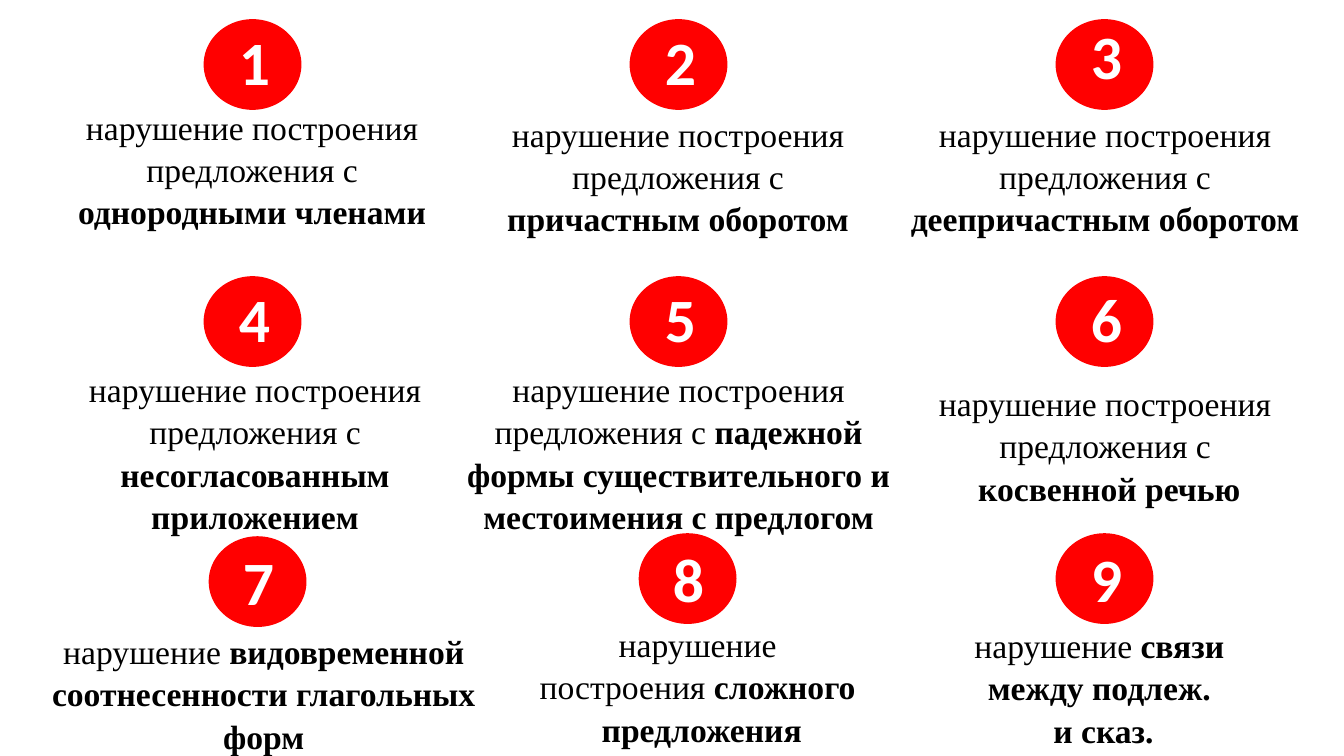
from pptx import Presentation
from pptx.dml.color import RGBColor
from pptx.enum.shapes import MSO_SHAPE
from pptx.enum.text import PP_ALIGN
from pptx.util import Inches, Pt

RED, WHITE, BLACK = "FF0000", "FFFFFF", "000000"
COLUMNS = 3
GRID_LEFT, GRID_TOP = 2.02, 0.19
COLUMN_STEP, ROW_STEP = 4.225, 2.55
BADGE_WIDTH, BADGE_HEIGHT = 0.97, 0.9
COMMON = "нарушение построения предложения с "

# Per card: badge shift, digit offset from badge, caption offset from
# grid point, caption size, paragraphs of (text, bold) runs
CARDS = [
    ((0, 0), (0.25, 0), (-1.6, 0.8), (4.16, 1.31),
     [[(COMMON, False), ("однородными членами", True)]]),
    ((0, 0), (0.25, 0), (-1.6, 0.87), (4.16, 1.31),
     [[(COMMON, False), ("причастным оборотом", True)]]),
    ((0, 0), (0.25, -0.06), (-1.59, 0.87), (4.16, 1.31),
     [[(COMMON, False), ("деепричастным оборотом", True)]]),
    ((0, 0), (0.25, 0), (-1.57, 0.85), (4.16, 1.72),
     [[(COMMON, False), ("несогласованным приложением", True)]]),
    ((0, 0), (0.25, 0), (-1.77, 0.85), (4.51, 1.72),
     [[(COMMON, False),
       ("падежной формы существительного и местоимения с предлогом", True)]]),
    ((0, 0), (0.25, 0), (-1.68, 0.99), (4.34, 1.31),
     [[(COMMON.rstrip(), False)],
      [(" ", False), ("косвенной речью", True)]]),
    ((0.05, 0.03), (0.24, 0.03), (-1.75, 0.9), (4.69, 1.31),
     [[("нарушение ", False),
       ("видовременной соотнесенности глагольных форм", True)]]),
    ((0.09, 0), (0.24, 0.03), (-2.06, 0.83), (5.55, 1.31),
     [[("нарушение ", False)],
      [("построения ", False), ("сложного ", True)],
      [("предложения", True)]]),
    ((0, 0), (0.25, 0.03), (-1.78, 0.84), (4.51, 1.31),
     [[("нарушение ", False), ("связи ", True)],
      [("между подлеж. ", True)],
      [("и сказ.", True)]]),
]


def color(value):
    return RGBColor.from_string(value)


def add_text(page, left, top, width, height, paragraphs, font, size, ink,
             align, spacing=1.0):
    box = page.shapes.add_textbox(Inches(left), Inches(top),
                                  Inches(width), Inches(height))
    frame = box.text_frame
    frame.word_wrap = True
    for index, runs in enumerate(paragraphs):
        para = frame.add_paragraph() if index else frame.paragraphs[0]
        para.alignment = align
        para.line_spacing = spacing
        for text, bold in runs:
            span = para.add_run()
            span.text = text
            span.font.name = font
            span.font.size = Pt(size)
            span.font.bold = bold
            span.font.color.rgb = color(ink)


def add_badge(page, left, top, number, digit_offset):
    circle = page.shapes.add_shape(MSO_SHAPE.OVAL, Inches(left), Inches(top),
                                   Inches(BADGE_WIDTH), Inches(BADGE_HEIGHT))
    circle.shadow.inherit = False
    circle.fill.solid()
    circle.fill.fore_color.rgb = color(RED)
    circle.line.fill.background()
    across, down = digit_offset
    add_text(page, left + across, top + down, 0.48, 0.84,
             [[(str(number), True)]], "Calibri", 44, WHITE, PP_ALIGN.LEFT)


def add_card(page, left, top, number, card):
    shift, digit_offset, caption_offset, caption_size, paragraphs = card
    # Numbered circle
    add_badge(page, left + shift[0], top + shift[1], number, digit_offset)
    # Caption below it
    add_text(page, left + caption_offset[0], top + caption_offset[1],
             *caption_size, paragraphs, "Times New Roman", 24, BLACK,
             PP_ALIGN.CENTER, 1.05)


def main():
    deck = Presentation()
    deck.slide_width, deck.slide_height = Inches(13.33), Inches(7.5)
    page = deck.slides.add_slide(deck.slide_layouts[6])
    for index, card in enumerate(CARDS):
        row, column = divmod(index, COLUMNS)
        add_card(page, GRID_LEFT + column * COLUMN_STEP,
                 GRID_TOP + row * ROW_STEP, index + 1, card)
    deck.save("out.pptx")


if __name__ == "__main__":
    main()
